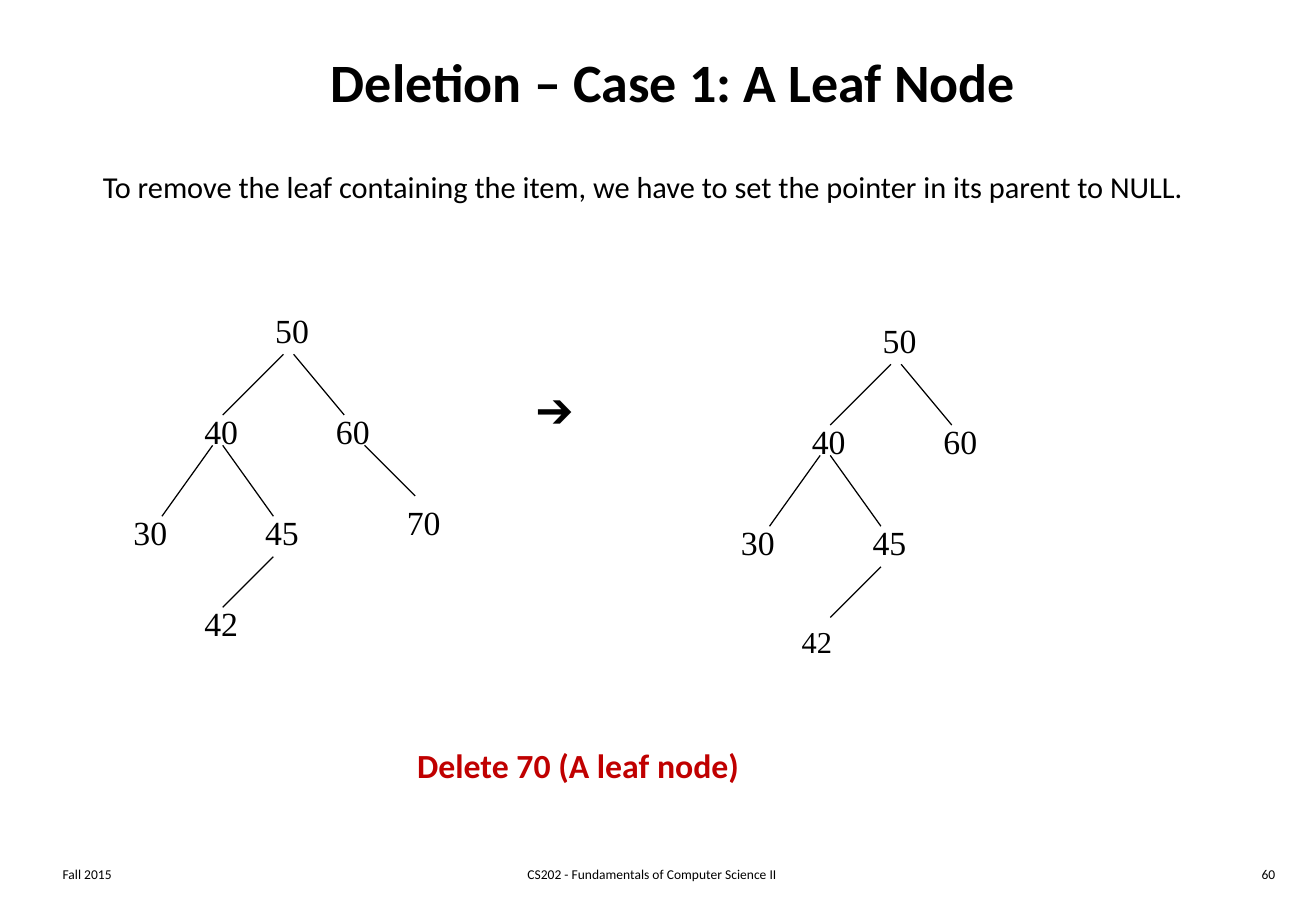
"""Build a slide on deleting a leaf node from a binary search tree."""
from dataclasses import dataclass

from pptx import Presentation
from pptx.dml.color import RGBColor
from pptx.enum.shapes import MSO_CONNECTOR
from pptx.enum.text import MSO_ANCHOR, PP_ALIGN
from pptx.oxml.ns import qn
from pptx.shapes.shapetree import GroupShapes, SlideShapes
from pptx.util import Cm, Pt
from lxml.etree import SubElement

COLORS = {"text": "000000", "accent": "C00000"}
SANS = "Calibri"
SERIF = "Times New Roman"
STEP = 2.54 / 12
NODE_WIDTH, NODE_HEIGHT = 1.22, 1.09


@dataclass(frozen=True)
class Label:
    text: str
    left: float
    top: float
    width: float
    height: float
    size: float
    font: str = SANS
    color: str = "text"
    bold: bool = False
    align: PP_ALIGN = PP_ALIGN.LEFT
    anchor: MSO_ANCHOR = MSO_ANCHOR.TOP
    wrap: bool = False


@dataclass(frozen=True)
class Node:
    value: int
    column: int
    row: int
    size: float = 20


@dataclass(frozen=True)
class Edge:
    start: tuple[int, int]
    end: tuple[int, int]


@dataclass(frozen=True)
class Tree:
    left: float
    top: float
    nodes: list[Node]
    edges: list[Edge]


LABELS = [
    Label("Fall 2015", 1.06, 17.99, 5.74, 0.64, 8, wrap=True),
    Label("CS202 - Fundamentals of Computer Science II", 8.48, 17.99, 10.31, 0.64, 8,
          align=PP_ALIGN.CENTER, wrap=True),
    Label("60", 21.17, 17.99, 5.74, 0.64, 8, align=PP_ALIGN.RIGHT, wrap=True),
    Label("Deletion – Case 1: A Leaf Node", 1.06, 0.42, 26.04, 2.54, 32, bold=True,
          align=PP_ALIGN.CENTER, anchor=MSO_ANCHOR.MIDDLE, wrap=True),
    Label("To remove the leaf containing the item, we have to set the pointer "
          "in its parent to NULL.", 1.9, 3.39, 23.34, 1.02, 18),
    Label("Delete 70 (A leaf node)", 8.47, 15.45, 7.32, 1.11, 20,
          color="accent", bold=True),
    Label("➔", 10.97, 7.94, 1.42, 1.28, 24, SERIF),
]

SHARED_NODES = [
    Node(50, 14, 0), Node(40, 7, 10), Node(60, 20, 10),
    Node(30, 0, 20), Node(45, 13, 20),
]
SHARED_EDGES = [
    Edge((16, 5), (10, 11)), Edge((17, 5), (22, 11)),
    Edge((9, 14), (4, 21)), Edge((10, 14), (15, 21)),
    Edge((15, 25), (10, 30)),
]
TREES = [
    Tree(2.54, 6.35, SHARED_NODES + [Node(70, 27, 19), Node(42, 7, 29)],
         SHARED_EDGES + [Edge((24, 14), (29, 19))]),
    Tree(15.24, 6.56, SHARED_NODES + [Node(42, 6, 30, 18)], SHARED_EDGES),
]


def draw_label(shapes: SlideShapes | GroupShapes, label: Label) -> None:
    box = shapes.add_textbox(Cm(label.left), Cm(label.top), Cm(label.width), Cm(label.height))
    frame = box.text_frame
    frame.word_wrap = label.wrap
    frame.vertical_anchor = label.anchor
    paragraph = frame.paragraphs[0]
    paragraph.text = label.text
    paragraph.alignment = label.align
    paragraph.font.name = label.font
    paragraph.font.size = Pt(label.size)
    paragraph.font.bold = label.bold
    paragraph.font.color.rgb = RGBColor.from_string(COLORS[label.color])


def draw_edge(shapes: GroupShapes, tree: Tree, edge: Edge) -> None:
    points = [
        Cm(origin + STEP * offset)
        for point in (edge.start, edge.end)
        for origin, offset in zip((tree.left, tree.top), point)
    ]
    connector = shapes.add_connector(MSO_CONNECTOR.STRAIGHT, *points)
    connector.line.color.rgb = RGBColor.from_string(COLORS["text"])
    connector.line.width = Pt(0.75)
    SubElement(connector._element.spPr, qn("a:effectLst"))


def draw_tree(shapes: SlideShapes, tree: Tree) -> None:
    group = shapes.add_group_shape()
    for edge in tree.edges:
        draw_edge(group.shapes, tree, edge)
    for node in tree.nodes:
        draw_label(group.shapes, Label(
            str(node.value), tree.left + STEP * node.column, tree.top + STEP * node.row,
            NODE_WIDTH, NODE_HEIGHT, node.size, SERIF))


def main() -> None:
    presentation = Presentation()
    presentation.slide_width = Cm(27.51)
    presentation.slide_height = Cm(19.05)
    slide = presentation.slides.add_slide(presentation.slide_layouts[6])
    for label in LABELS:
        draw_label(slide.shapes, label)
    for tree in TREES:
        draw_tree(slide.shapes, tree)
    presentation.save("out.pptx")


if __name__ == "__main__":
    main()
